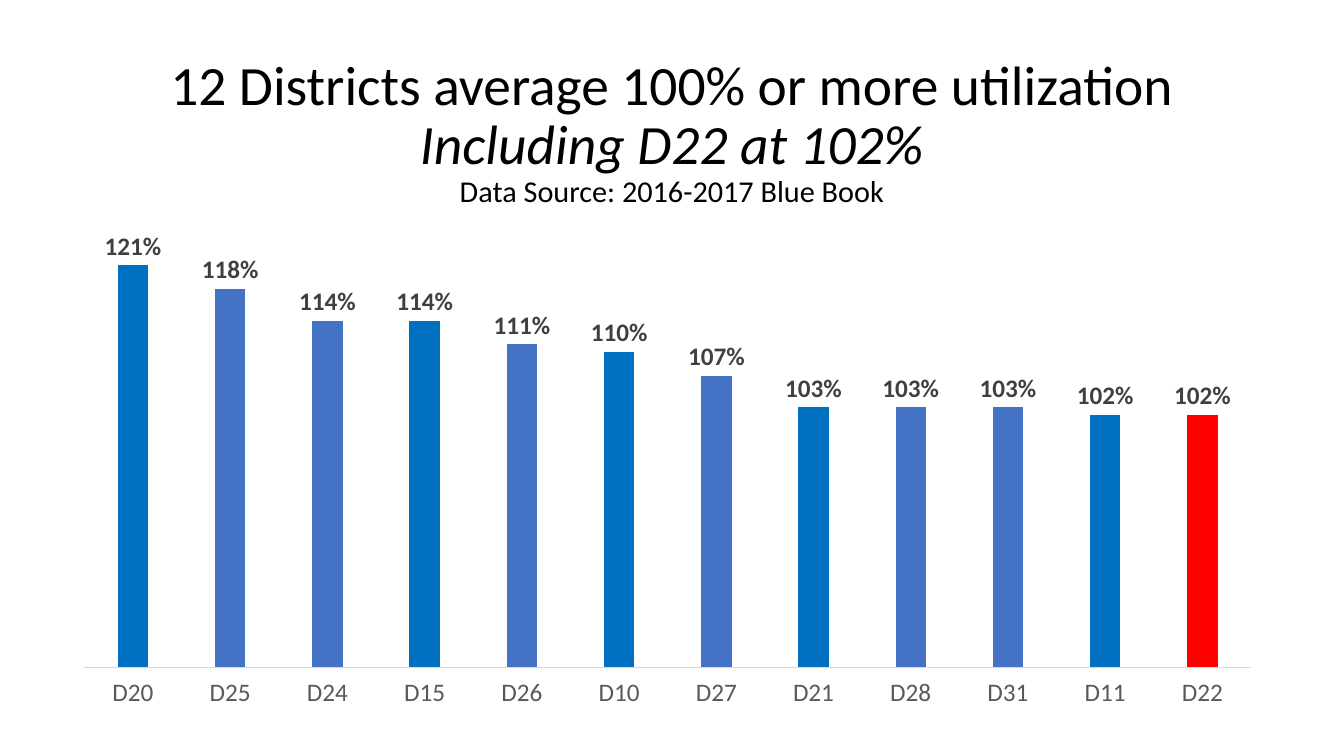
"""Build the district utilization slide with its title and column chart."""
from dataclasses import dataclass

from pptx import Presentation
from pptx.chart.data import CategoryChartData
from pptx.dml.color import RGBColor
from pptx.enum.chart import XL_CHART_TYPE as ChartType
from pptx.enum.chart import XL_LABEL_POSITION as LabelPosition
from pptx.enum.chart import XL_TICK_LABEL_POSITION as TickLabels
from pptx.enum.chart import XL_TICK_MARK as TickMark
from pptx.enum.text import MSO_ANCHOR as Anchor
from pptx.enum.text import PP_ALIGN as Align
from pptx.oxml import parse_xml
from pptx.oxml.ns import nsdecls
from pptx.slide import Slide
from pptx.util import Pt


@dataclass(frozen=True)
class Theme:
    """Colours, font and type sizes of the slide."""

    font: str = "Calibri"
    text: RGBColor = RGBColor(0x00, 0x00, 0x00)
    value_text: RGBColor = RGBColor(0x40, 0x40, 0x40)
    axis_text: RGBColor = RGBColor(0x59, 0x59, 0x59)
    axis_line: RGBColor = RGBColor(0xD9, 0xD9, 0xD9)
    column: RGBColor = RGBColor(0x44, 0x72, 0xC4)
    accent: RGBColor = RGBColor(0x00, 0x70, 0xC0)
    highlight: RGBColor = RGBColor(0xFF, 0x00, 0x00)
    title_size: float = 39.6
    source_size: float = 21.6
    chart_size: float = 18


@dataclass(frozen=True)
class TitleLine:
    """One line of the title."""

    text: str
    size: float
    italic: bool = False


@dataclass(frozen=True)
class District:
    """A district, its utilization and the colour of its column."""

    name: str
    utilization: float
    color: RGBColor


THEME = Theme()
TITLE_LINES = [
    TitleLine("12 Districts average 100% or more utilization", THEME.title_size),
    TitleLine("Including D22 at 102%", THEME.title_size, italic=True),
    TitleLine("Data Source: 2016-2017 Blue Book", THEME.source_size),
]
DISTRICTS = [
    District("D20", 1.21, THEME.accent),
    District("D25", 1.18, THEME.column),
    District("D24", 1.14, THEME.column),
    District("D15", 1.14, THEME.accent),
    District("D26", 1.11, THEME.column),
    District("D10", 1.10, THEME.accent),
    District("D27", 1.07, THEME.column),
    District("D21", 1.03, THEME.accent),
    District("D28", 1.03, THEME.column),
    District("D31", 1.03, THEME.column),
    District("D11", 1.02, THEME.accent),
    District("D22", 1.02, THEME.highlight),
]
PLOT_LAYOUT = {"x": 0.026, "y": 0, "w": 0.974, "h": 0.908}


def add_title(slide: Slide, lines: list[TitleLine]) -> None:
    """Add the centred title, its lines parted by line breaks."""
    box = slide.shapes.add_textbox(Pt(66), Pt(28.75), Pt(828), Pt(133))
    frame = box.text_frame
    frame.word_wrap = True
    frame.vertical_anchor = Anchor.MIDDLE
    paragraph = frame.paragraphs[0]
    paragraph.alignment = Align.CENTER
    paragraph.line_spacing = 0.9
    for index, line in enumerate(lines):
        if index:
            paragraph.add_line_break()
        run = paragraph.add_run()
        run.text = line.text
        run.font.name = THEME.font
        run.font.size = Pt(line.size)
        run.font.italic = line.italic
        run.font.color.rgb = THEME.text


def add_utilization_chart(slide: Slide, districts: list[District]) -> None:
    """Add the column chart with one coloured column per district."""
    data = CategoryChartData(number_format="0%")
    data.categories = [district.name for district in districts]
    data.add_series("Series 1", [district.utilization for district in districts])
    chart = slide.shapes.add_chart(
        ChartType.COLUMN_CLUSTERED, Pt(38), Pt(139), Pt(856), Pt(372), data
    ).chart
    chart.has_legend = False
    chart.has_title = False
    chart.font.name = THEME.font
    chart.font.size = Pt(THEME.chart_size)

    category_axis = chart.category_axis
    category_axis.major_tick_mark = TickMark.NONE
    category_axis.tick_label_position = TickLabels.LOW
    category_axis.tick_labels.font.size = Pt(THEME.chart_size)
    category_axis.tick_labels.font.color.rgb = THEME.axis_text
    category_axis.format.line.color.rgb = THEME.axis_line
    category_axis.format.line.width = Pt(0.75)

    value_axis = chart.value_axis
    value_axis.minimum_scale = 0.7
    value_axis.maximum_scale = 1.3
    value_axis.has_major_gridlines = False
    value_axis.visible = False

    plot = chart.plots[0]
    plot.gap_width = 219
    plot.overlap = -27
    plot.vary_by_categories = False
    series = plot.series[0]
    series.format.fill.solid()
    series.format.fill.fore_color.rgb = THEME.column
    for index, district in enumerate(districts):
        if district.color != THEME.column:
            fill = series.points[index].format.fill
            fill.solid()
            fill.fore_color.rgb = district.color

    labels = series.data_labels
    labels.show_value = True
    labels.position = LabelPosition.OUTSIDE_END
    labels.number_format = "0%"
    labels.number_format_is_linked = False
    labels.font.name = THEME.font
    labels.font.size = Pt(THEME.chart_size)
    labels.font.bold = True
    labels.font.color.rgb = THEME.value_text

    modes = "".join(f'<c:{side}Mode val="edge"/>' for side in "xy")
    sizes = "".join(f'<c:{side} val="{value}"/>' for side, value in PLOT_LAYOUT.items())
    layout = parse_xml(
        f'<c:layout {nsdecls("c")}><c:manualLayout><c:layoutTarget val="inner"/>'
        f"{modes}{sizes}</c:manualLayout></c:layout>"
    )
    plot_area = chart.element.chart.plotArea
    for old_layout in plot_area.findall(layout.tag):
        plot_area.remove(old_layout)
    plot_area.insert(0, layout)


def main() -> None:
    """Build and save the presentation."""
    presentation = Presentation()
    presentation.slide_width = Pt(960)
    presentation.slide_height = Pt(540)
    slide = presentation.slides.add_slide(presentation.slide_layouts[6])
    add_title(slide, TITLE_LINES)
    add_utilization_chart(slide, DISTRICTS)
    presentation.save("out.pptx")


if __name__ == "__main__":
    main()
